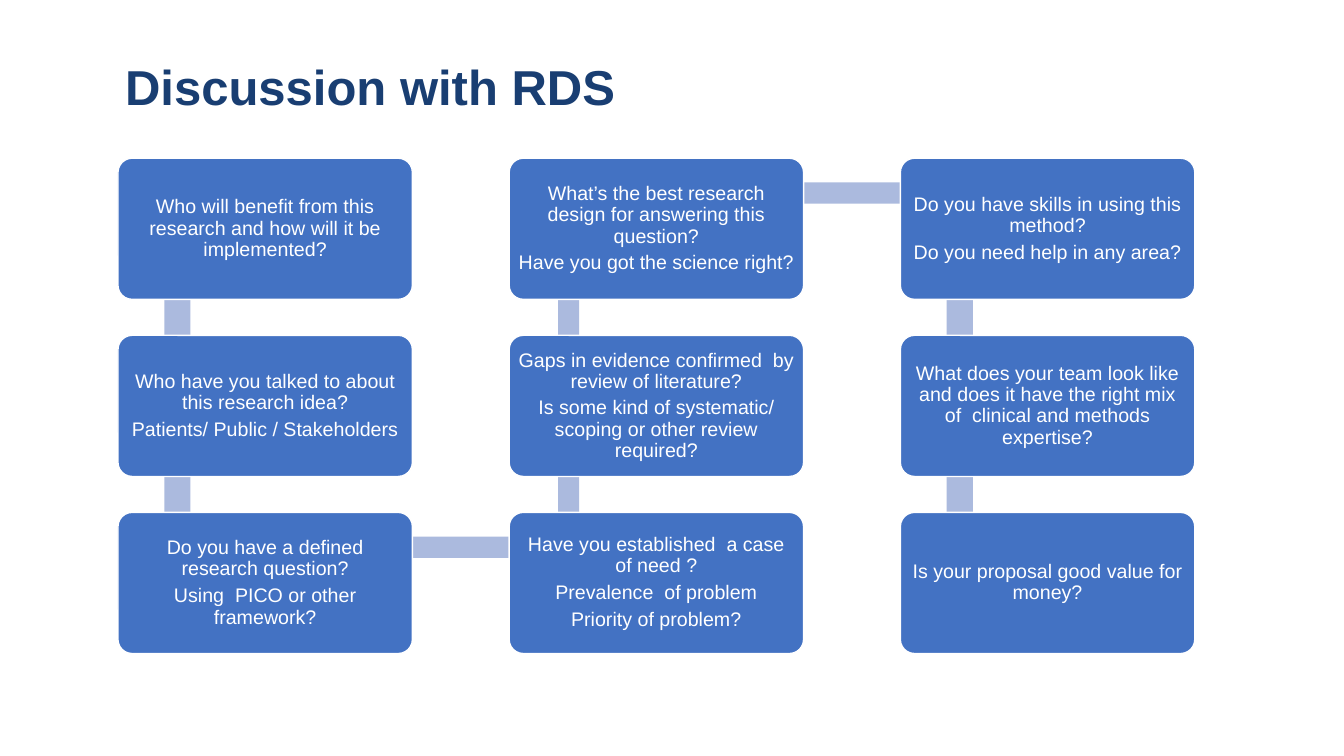
from dataclasses import dataclass

from pptx import Presentation
from pptx.dml.color import RGBColor
from pptx.enum.shapes import MSO_SHAPE
from pptx.enum.text import MSO_ANCHOR, PP_ALIGN
from pptx.util import Inches, Pt

RECT, ROUNDED = MSO_SHAPE.RECTANGLE, MSO_SHAPE.ROUNDED_RECTANGLE
MIDDLE = MSO_ANCHOR.MIDDLE
LEFT, CENTER = PP_ALIGN.LEFT, PP_ALIGN.CENTER

FONT = "Arial"
NAVY, BLUE, PALE, WHITE = "193E72", "4372C3", "ABBADE", "FFFFFF"
BOX_W, BOX_H = 2.92, 1.4
GRID_X, GRID_Y = 1.17, 1.57
STEP_X, STEP_Y = 3.88, 1.757
BAR_INSET = 0.59


@dataclass
class Step:
    col: int
    row: int
    lines: list[str]
    margin: float = 0.06
    gap: float = 4.2

    @property
    def x(self) -> float:
        return GRID_X + self.col * STEP_X

    @property
    def y(self) -> float:
        return GRID_Y + self.row * STEP_Y


STEPS = [
    Step(0, 0, ["Who will benefit from this research and how will it be implemented?"]),
    Step(0, 1, ["Who have you talked to about this research idea?",
                "Patients/ Public / Stakeholders"]),
    Step(0, 2, ["Do you have a defined research question?",
                "Using  PICO or other framework?"]),
    Step(1, 2, ["Have you established  a case of need ?",
                "Prevalence  of problem", "Priority of problem?"]),
    Step(1, 1, ["Gaps in evidence confirmed  by review of literature?",
                "Is some kind of systematic/ scoping or other review required?"], 0.05, 3.7),
    Step(1, 0, ["What’s the best research design for answering this question?",
                "Have you got the science right?"], 0.05, 3.7),
    Step(2, 0, ["Do you have skills in using this method?",
                "Do you need help in any area?"]),
    Step(2, 1, ["What does your team look like and does it have the right mix "
                "of  clinical and methods expertise?"]),
    Step(2, 2, ["Is your proposal good value for money?"]),
]


def rgb(color: str) -> RGBColor:
    """Turn a hex string into a colour."""
    return RGBColor.from_string(color)


def add_box(s, kind, x: float, y: float, w: float, h: float, fill: str):
    """Add a plain filled shape without outline or shadow."""
    sp = s.shapes.add_shape(kind, Inches(x), Inches(y), Inches(w), Inches(h))
    sp.shadow.inherit = False
    sp.fill.solid()
    sp.fill.fore_color.rgb = rgb(fill)
    sp.line.fill.background()
    return sp


def style(p, size: float, color: str, align, bold: bool = False) -> None:
    """Format a paragraph and its runs."""
    p.alignment = align
    p.line_spacing = 0.9
    for r in p.runs:
        r.font.name = FONT
        r.font.size = Pt(size)
        r.font.bold = bold
        r.font.color.rgb = rgb(color)


def set_margins(tf, side: float, top: float) -> None:
    """Set the text insets and centre the text vertically."""
    tf.word_wrap = True
    tf.vertical_anchor = MIDDLE
    tf.margin_left = tf.margin_right = Inches(side)
    tf.margin_top = tf.margin_bottom = Inches(top)


def add_bar(s, a: Step, b: Step) -> None:
    """Draw the band that runs from one step to the next."""
    x, y = min(a.x, b.x), min(a.y, b.y)
    if a.row == b.row:
        add_box(s, RECT, x + BAR_INSET, y + 0.24, STEP_X, 0.21, PALE)
    else:
        w = 0.21 if a.col == 1 else 0.26
        add_box(s, RECT, x + BAR_INSET - w / 2, y + 0.35, w, STEP_Y, PALE)


def add_step(s, step: Step) -> None:
    """Draw one rounded box with its questions."""
    sp = add_box(s, ROUNDED, step.x, step.y, BOX_W, BOX_H, BLUE)
    sp.adjustments[0] = 0.1
    sp.line.color.rgb = rgb(WHITE)
    sp.line.width = Pt(1)
    tf = sp.text_frame
    set_margins(tf, step.margin, step.margin)
    tf.text = "\n".join(step.lines)
    for i, p in enumerate(tf.paragraphs):
        style(p, 14, WHITE, CENTER)
        if i:
            p.space_before = Pt(step.gap)


def add_title(s, text: str) -> None:
    """Place and format the slide title."""
    sp = s.shapes.title
    sp.left, sp.top, sp.width, sp.height = map(Inches, (1.17, 0.53, 8.62, 0.72))
    tf = sp.text_frame
    set_margins(tf, 0.07, 0.04)
    tf.text = text
    style(tf.paragraphs[0], 35, NAVY, LEFT, True)


def main() -> None:
    """Build the slide and save it."""
    prs = Presentation()
    prs.slide_width, prs.slide_height = Inches(13.33), Inches(7.5)
    s = prs.slides.add_slide(prs.slide_layouts[5])
    add_title(s, "Discussion with RDS")
    for a, b in zip(STEPS, STEPS[1:]):
        add_bar(s, a, b)
    for step in STEPS:
        add_step(s, step)
    prs.save("out.pptx")


if __name__ == "__main__":
    main()
